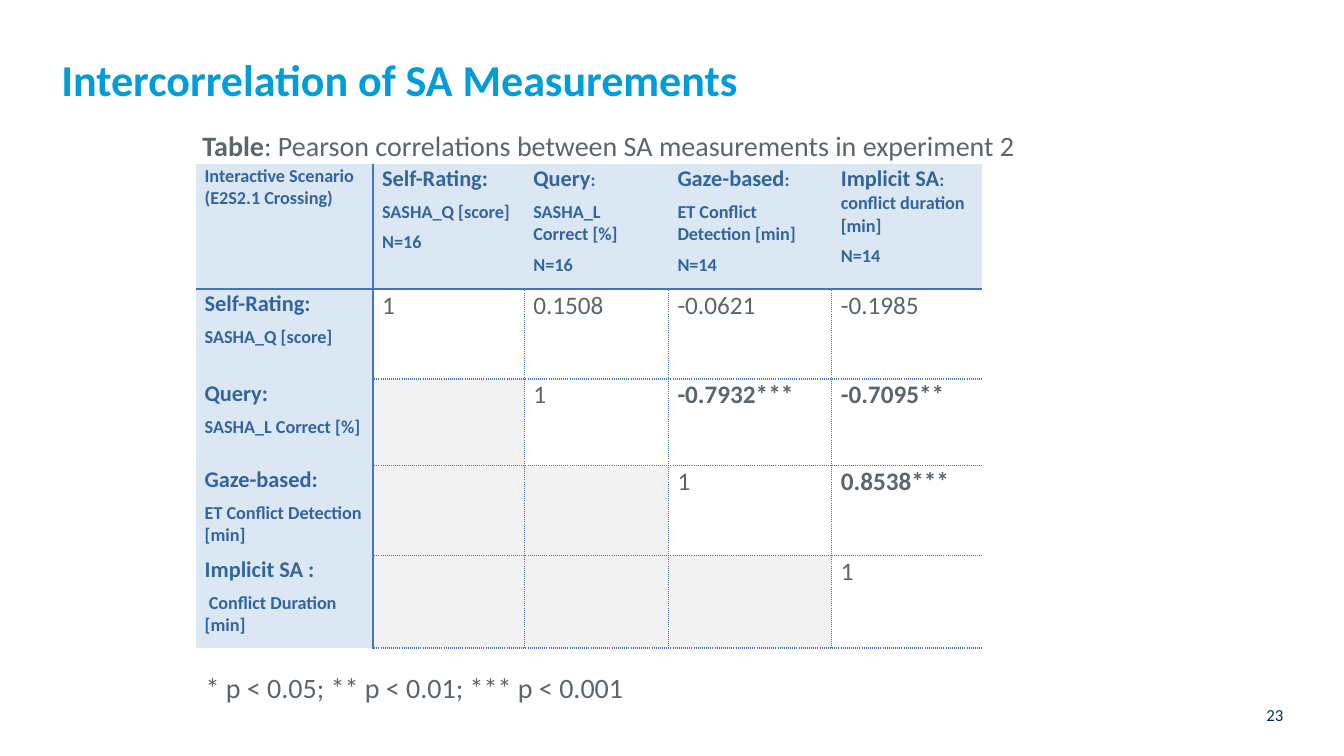
from dataclasses import dataclass

import pptx
import pptx.dml.color
import pptx.enum.text
import pptx.oxml
import pptx.oxml.ns
import pptx.util
from pptx.util import Inches

Color = pptx.dml.color.RGBColor.from_string
Align = pptx.enum.text.PP_ALIGN
Anchor = pptx.enum.text.MSO_ANCHOR
AutoSize = pptx.enum.text.MSO_AUTO_SIZE


@dataclass(frozen=True)
class Theme:
    font: str = "Calibri"
    title: str = "009DD9"
    text: str = "59666D"
    heading: str = "32659D"
    number: str = "002F6E"
    heading_fill: str = "DBE7F3"
    unused_fill: str = "F2F2F2"
    rule: str = "4472C4"
    title_size: float = 31.5
    caption_size: float = 20
    value_size: float = 18
    name_size: float = 16
    detail_size: float = 13
    number_size: float = 12


@dataclass(frozen=True)
class Span:
    text: str
    size: float
    bold: bool = False
    color: str = Theme.text


@dataclass(frozen=True)
class Label:
    left: float
    top: float
    width: float
    height: float
    spans: tuple[Span, ...]


THEME = Theme()
NO_GRID_STYLE = "{2D5ABB26-0587-4C30-8999-92F81FD0307C}"


def name(text: str) -> Span:
    return Span(text, THEME.name_size, True, THEME.heading)


def detail(text: str) -> Span:
    return Span(text, THEME.detail_size, True, THEME.heading)


# Headings: one tuple of spans per paragraph
COLUMN_HEADINGS = [
    [(detail("Interactive Scenario (E2S2.1 Crossing)"),)],
    [(name("Self-Rating:"),), (detail("SASHA_Q [score]"),), (detail("N=16"),)],
    [(name("Query"), detail(":")), (detail("SASHA_L Correct [%]"),), (detail("N=16"),)],
    [(name("Gaze-based"), detail(":")), (detail("ET Conflict Detection [min]"),),
     (detail("N=14"),)],
    [(name("Implicit SA"), detail(": conflict duration [min]")), (detail("N=14"),)],
]
ROW_HEADINGS = [
    [(name("Self-Rating:"),), (detail("SASHA_Q [score]"),)],
    [(name("Query:"),), (detail("SASHA_L Correct [%]"),)],
    [(name("Gaze-based:"),), (detail("ET Conflict Detection [min]"),)],
    [(name("Implicit SA :"),), (detail(" Conflict Duration [min]"),)],
]
# Upper triangle, each row starting at the diagonal
CORRELATIONS = [
    ["1", "0.1508", "-0.0621", "-0.1985"],
    ["1", "-0.7932***", "-0.7095**"],
    ["1", "0.8538***"],
    ["1"],
]
COLUMN_WIDTHS = [1.76, 1.5, 1.43, 1.62, 1.49]
ROW_HEIGHTS = [1.24, 0.89, 0.86, 0.89, 0.92]
LABELS = [
    Label(1.91, 1.23, 8.34, 0.44, (
        Span("Table", THEME.caption_size, True),
        Span(": Pearson correlations between SA measurements in experiment 2",
             THEME.caption_size))),
    Label(1.94, 6.6, 4.44, 0.44, (
        Span("* p < 0.05; ** p < 0.01; *** p < 0.001", THEME.caption_size),)),
]


def write(para, spans: tuple[Span, ...]) -> None:
    para.font.name = THEME.font
    for span in spans:
        run = para.add_run()
        run.text = span.text
        run.font.size = pptx.util.Pt(span.size)
        run.font.bold = span.bold
        run.font.color.rgb = Color(span.color)


def clear_margins(frame) -> None:
    frame.margin_left = frame.margin_right = frame.margin_top = frame.margin_bottom = 0


def add_label(page, label: Label):
    box = page.shapes.add_textbox(Inches(label.left), Inches(label.top),
                                  Inches(label.width), Inches(label.height))
    box.text_frame.word_wrap = False
    write(box.text_frame.paragraphs[0], label.spans)
    return box


def edge_below(row: int, column: int) -> str | None:
    """Dash of the horizontal rule under a cell."""
    if row < 0:
        return None
    if row == 0:
        return "solid"
    return "sysDot" if column else None


def edge_right(row: int, column: int) -> str | None:
    """Dash of the vertical rule to the right of a cell."""
    if column == 0:
        return "solid"
    return "sysDot" if row and 0 < column < len(COLUMN_WIDTHS) - 1 else None


def set_borders(cell, row: int, column: int) -> None:
    edges = {
        "lnL": edge_right(row, column - 1),
        "lnR": edge_right(row, column),
        "lnT": edge_below(row - 1, column),
        "lnB": edge_below(row, column),
    }
    properties = cell._tc.get_or_add_tcPr()
    for side, dash in edges.items():
        width = pptx.util.Pt(1.5 if dash == "solid" else 1)
        paint = "<a:noFill/>"
        if dash:
            paint = (f'<a:solidFill><a:srgbClr val="{THEME.rule}"/></a:solidFill>'
                     f'<a:prstDash val="{dash}"/>')
        properties.append(pptx.oxml.parse_xml(
            f'<a:{side} {pptx.oxml.ns.nsdecls("a")} w="{width}">{paint}</a:{side}>'))


def fill_cell(cell, row: int, column: int) -> None:
    cell.margin_left = cell.margin_right = Inches(0.09)
    cell.margin_top, cell.margin_bottom = Inches(0.01), 0
    set_borders(cell, row, column)
    paragraphs, fill, space_after = [], None, 6
    if row == 0 or column == 0:
        paragraphs = COLUMN_HEADINGS[column] if row == 0 else ROW_HEADINGS[row - 1]
        fill = THEME.heading_fill
    elif column < row:
        fill = THEME.unused_fill
    else:
        value = CORRELATIONS[row - 1][column - row]
        paragraphs = [(Span(value, THEME.value_size, value.endswith("*")),)]
        space_after = 3
    if fill:
        cell.fill.solid()
        cell.fill.fore_color.rgb = Color(fill)
    else:
        cell.fill.background()
    frame = cell.text_frame
    for index, spans in enumerate(paragraphs):
        para = frame.add_paragraph() if index else frame.paragraphs[0]
        para.space_after = pptx.util.Pt(space_after)
        write(para, spans)


def add_correlations(page) -> None:
    frame = page.shapes.add_table(
        len(ROW_HEIGHTS), len(COLUMN_WIDTHS), Inches(1.94), Inches(1.63),
        Inches(sum(COLUMN_WIDTHS)), Inches(sum(ROW_HEIGHTS)))
    table = frame.table
    table.horz_banding = False
    table._tbl.tblPr.find(pptx.oxml.ns.qn("a:tableStyleId")).text = NO_GRID_STYLE
    for column, width in zip(table.columns, COLUMN_WIDTHS):
        column.width = Inches(width)
    for row, height in enumerate(ROW_HEIGHTS):
        table.rows[row].height = Inches(height)
        for column in range(len(COLUMN_WIDTHS)):
            fill_cell(table.cell(row, column), row, column)


def main() -> None:
    deck = pptx.Presentation()
    deck.slide_width, deck.slide_height = Inches(13.33), Inches(7.5)
    page = deck.slides.add_slide(deck.slide_layouts[5])

    # Title
    title = page.shapes.title
    title.left, title.top = Inches(0.61), Inches(0.59)
    title.width, title.height = Inches(7.69), Inches(0.45)
    clear_margins(title.text_frame)
    title.text_frame.auto_size = AutoSize.NONE
    title.text_frame.vertical_anchor = Anchor.MIDDLE
    para = title.text_frame.paragraphs[0]
    para.alignment, para.line_spacing = Align.LEFT, 0.9
    write(para, (Span("Intercorrelation of SA Measurements", THEME.title_size, True,
                      THEME.title),))

    # Table with caption and significance note
    add_correlations(page)
    for label in LABELS:
        add_label(page, label)

    # Page number
    number = add_label(page, Label(9.73, 6.99, 3, 0.26, (
        Span("23", THEME.number_size, False, THEME.number),)))
    clear_margins(number.text_frame)
    number.text_frame.word_wrap = True
    number.text_frame.paragraphs[0].alignment = Align.RIGHT

    deck.save("out.pptx")


if __name__ == "__main__":
    main()
